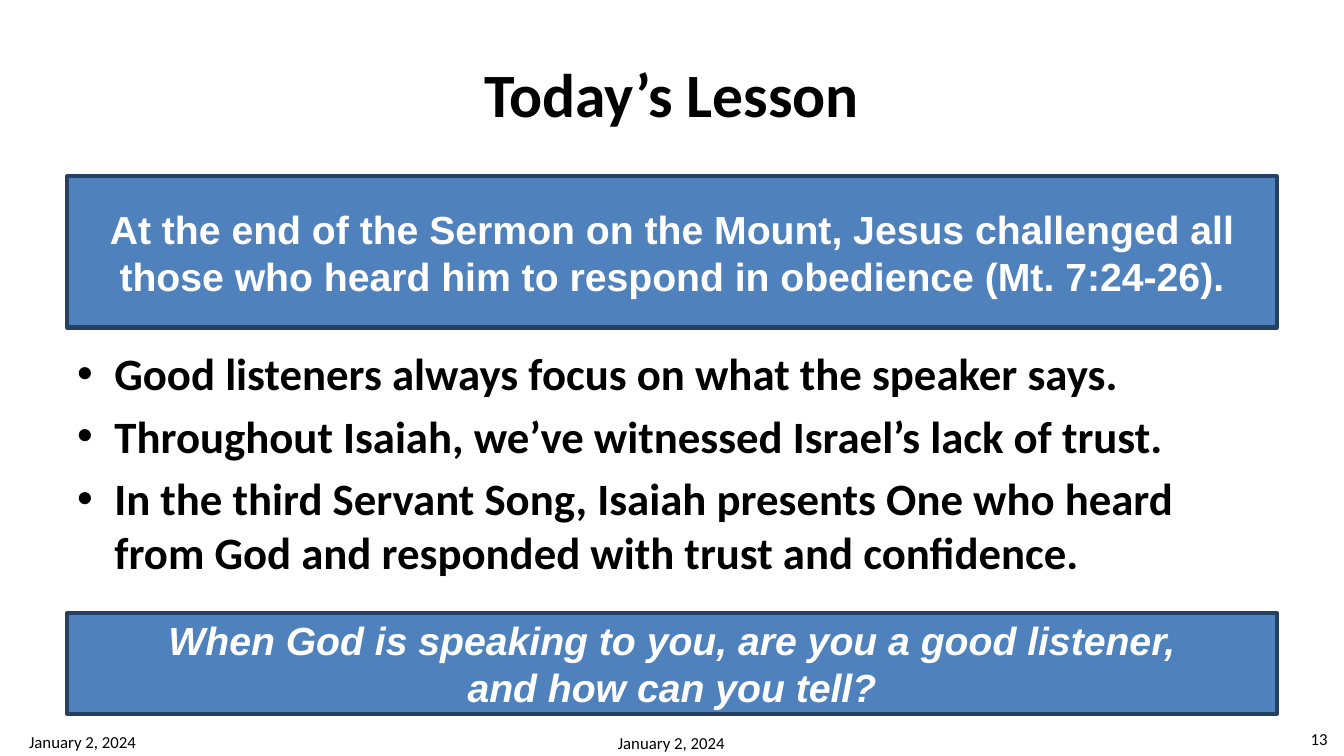
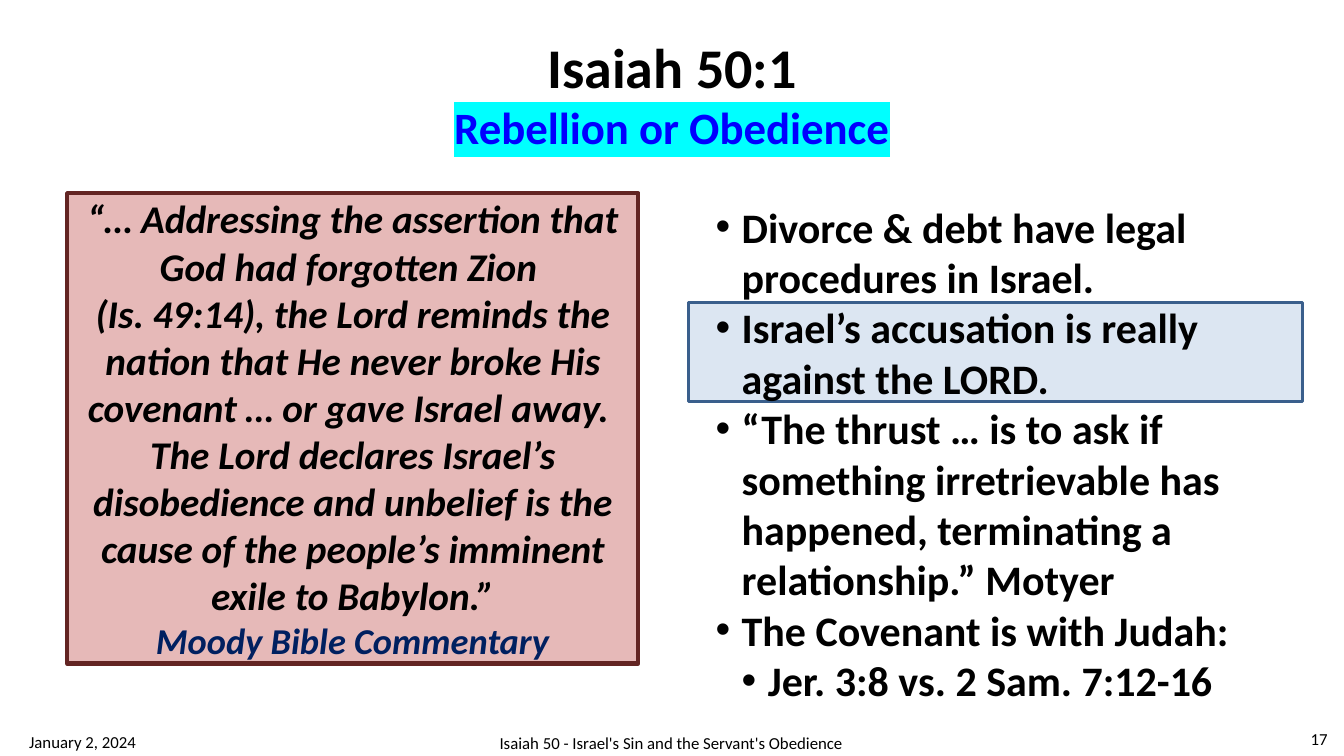
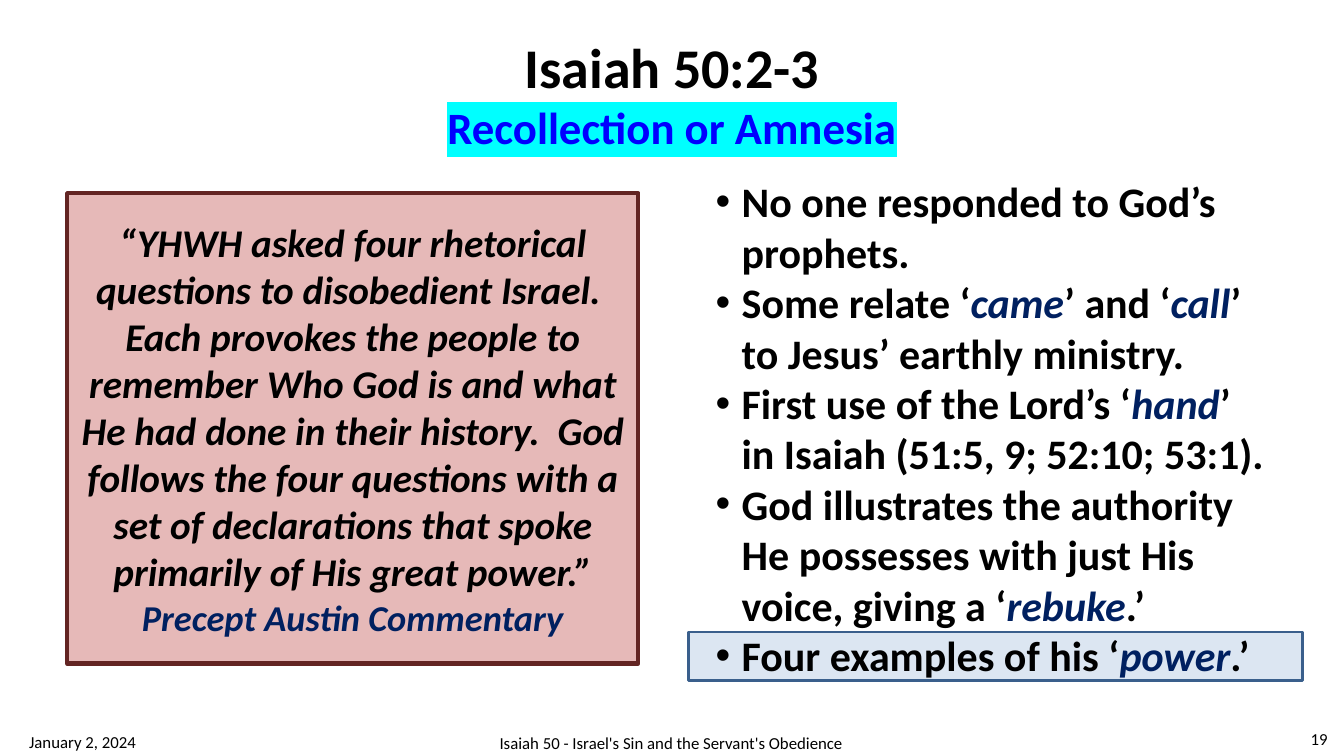
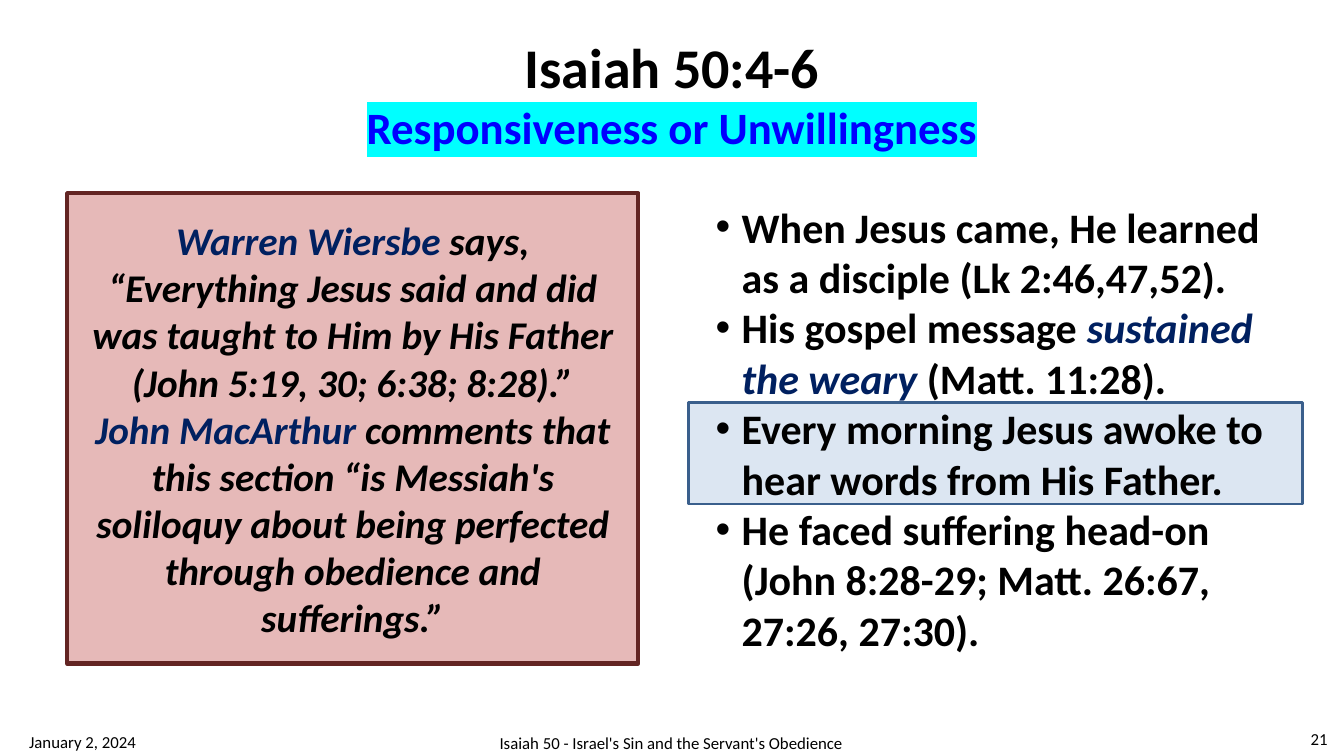
"""Build four slides of a lesson on Isaiah 50."""
from lxml.etree import SubElement
from pptx import Presentation
from pptx.dml.color import RGBColor as RGB
from pptx.enum.shapes import MSO_SHAPE as SHAPE
from pptx.enum.text import MSO_ANCHOR as ANCHOR, MSO_AUTO_SIZE as AUTO, PP_ALIGN as ALIGN
from pptx.oxml import parse_xml
from pptx.oxml.ns import qn
from pptx.util import Pt

BLACK, WHITE = RGB(0, 0, 0), RGB(255, 255, 255)
NAVY, BLUE = RGB(0x00, 0x20, 0x60), RGB(0x00, 0x00, 0xFF)
STEEL, DEEP = RGB(0x4F, 0x81, 0xBD), RGB(0x25, 0x40, 0x61)
PINK, WINE = RGB(0xE6, 0xB9, 0xB8), RGB(0x63, 0x25, 0x23)
PALE, EDGE = RGB(0xDC, 0xE6, 0xF2), RGB(0x3A, 0x5F, 0x8C)
GLOW = ('<a:highlight xmlns:a="http://schemas.openxmlformats.org/drawingml/2006/main">'
        '<a:srgbClr val="00FFFF"/></a:highlight>')
DATE = "January 2, 2024"
THEME = "Isaiah 50 - Israel's Sin and the Servant's Obedience"
LEFT, WIDE = 48, 864


def write(par, text, size, color=BLACK, bold=True, slant=False, font="Calibri",
          align=ALIGN.LEFT, accent=None):
    """Fill a paragraph; parts between asterisks are navy italics."""
    par.alignment = align
    for n, part in enumerate(text.split("*")):
        for row, line in enumerate(part.split("\n")):
            if row:
                par.add_line_break()
            if line:
                run = par.add_run()
                run.text = line
                face = run.font
                face.name, face.bold = font, bold
                face.size = Pt(accent if accent and n % 2 else size)
                face.italic = slant or n % 2 == 1
                face.color.rgb = NAVY if n % 2 else color


def panel(slide, area, fill=None, edge=None, line=3):
    """Add a box, filled and outlined if colours are given, and return its frame."""
    area = [Pt(v) for v in area]
    if fill is None:
        shape = slide.shapes.add_textbox(*area)
    else:
        shape = slide.shapes.add_shape(SHAPE.RECTANGLE, *area)
        shape.shadow.inherit = False
        shape.fill.solid()
        shape.fill.fore_color.rgb = fill
        shape.line.color.rgb = edge
        shape.line.width = Pt(line)
    frame = shape.text_frame
    frame.word_wrap = True
    frame.vertical_anchor = ANCHOR.MIDDLE
    return frame


LESSON = [
    "Good listeners always focus on what the speaker says.",
    "Throughout Isaiah, we’ve witnessed Israel’s lack of trust.",
    "In the third Servant Song, Isaiah presents One who heard from God and responded "
    "with trust and confidence.",
]
BANDS = [
    (126, 108, False, "At the end of the Sermon on the Mount, Jesus challenged all those "
                      "who heard him to respond in obedience (Mt. 7:24-26)."),
    (437.8, 72, True, "When God is speaking to you, are you a good listener,\n"
                      "and how can you tell?"),
]
PAGES = [
    dict(num=13, head="Today’s Lesson", foot=DATE, points=LESSON, bands=BANDS,
         area=(LEFT, 243.4, WIDE, 194.4), size=32, dent=26.64, gap=6.4),
    dict(num=17, head="Isaiah 50:1", sub="Rebellion or Obedience", mark=(216, 70.6),
         area=(504, 145.4, 409, 356.4),
         quote="“… Addressing the assertion that God had forgotten Zion \n(Is. 49:14), the "
               "Lord reminds the nation that He never broke His covenant … or gave Israel "
               "away.  The Lord declares Israel’s disobedience and unbelief is the cause of "
               "the people’s imminent exile to Babylon.”\n*Moody Bible Commentary*",
         points=["Divorce & debt have legal procedures in Israel.",
                 "Israel’s accusation is really against the LORD.",
                 "“The thrust … is to ask if something irretrievable has happened, "
                 "terminating a relationship.” Motyer",
                 "The Covenant is with Judah:",
                 "\tJer. 3:8 vs. 2 Sam. 7:12-16"]),
    dict(num=19, head="Isaiah 50:2-3", sub="Recollection or Amnesia", mark=(451.4, 34.6),
         quote="“YHWH asked four rhetorical questions to disobedient Israel.  Each provokes "
               "the people to remember Who God is and what He had done in their history.  "
               "God follows the four questions with a set of declarations that spoke "
               "primarily of His great power.”\n*Precept Austin Commentary*",
         points=["No one responded to God’s prophets.",
                 "Some relate ‘*came*’ and ‘*call*’ to Jesus’ earthly ministry.",
                 "First use of the Lord’s ‘*hand*’ in Isaiah (51:5, 9; 52:10; 53:1).",
                 "God illustrates the authority He possesses with just His voice, giving a "
                 "‘*rebuke*.’",
                 "Four examples of his ‘*power*.’"]),
    dict(num=21, head="Isaiah 50:4-6", sub="Responsiveness or Unwillingness",
         mark=(287.3, 72.7), accent=28,
         quote="*Warren Wiersbe *says, “Everything Jesus said and did was taught to Him by "
               "His Father (John 5:19, 30; 6:38; 8:28).”\n*John MacArthur *comments that "
               "this section “is Messiah's soliloquy about being perfected through "
               "obedience and sufferings.”",
         points=["When Jesus came, He learned as a disciple (Lk 2:46,47,52).",
                 "His gospel message *sustained the weary* (Matt. 11:28).",
                 "Every morning Jesus awoke to hear words from His Father.",
                 "He faced suffering head-on (John 8:28-29; Matt. 26:67, 27:26, 27:30)."]),
]

deck = Presentation()
deck.slide_width, deck.slide_height = Pt(960), Pt(540)

for page in PAGES:
    slide = deck.slides.add_slide(deck.slide_layouts[5])
    title = slide.shapes.title
    title.left, title.top, title.width, title.height = Pt(LEFT), Pt(21.6), Pt(WIDE), Pt(90)
    frame = title.text_frame
    frame.auto_size, frame.vertical_anchor = AUTO.NONE, ANCHOR.MIDDLE
    par = frame.paragraphs[0]
    sub = page.get("sub")
    write(par, page["head"], 40 if sub else 44, align=ALIGN.CENTER)
    if sub:
        par.add_line_break()
        write(par, sub, 32, BLUE, align=ALIGN.CENTER)
        props = par.runs[-1].font._element
        props.find(qn("a:solidFill")).addnext(parse_xml(GLOW))

    if "quote" in page:
        frame = panel(slide, (LEFT, 138, 408, 336), PINK, WINE)
        write(frame.paragraphs[0], page["quote"], 28, slant=True, align=ALIGN.CENTER,
              accent=page.get("accent", 26))
        top, high = page["mark"]
        panel(slide, (492, top, 438.5, high), PALE, EDGE, 2)

    frame = panel(slide, page.get("area", (504, 127.4, 409, 356.4)))
    if "bands" in page:
        frame.vertical_anchor = ANCHOR.TOP
    dent = page.get("dent", 18.72)
    for n, text in enumerate(page["points"]):
        par = frame.add_paragraph() if n else frame.paragraphs[0]
        par.level = int(text.startswith("\t"))
        props = par._p.get_or_add_pPr()
        props.set("marL", str(Pt(dent * (par.level + 1))))
        props.set("indent", str(-Pt(dent)))
        SubElement(props, qn("a:buFont")).set("typeface", "Arial")
        SubElement(props, qn("a:buChar")).set("char", "•")
        if n:
            par.space_before = Pt(page.get("gap", 0))
        write(par, text.strip("\t"), page.get("size", 30))

    for top, high, slant, text in page.get("bands", []):
        frame = panel(slide, (LEFT, top, WIDE, high), STEEL, DEEP)
        write(frame.paragraphs[0], text, 28, WHITE, slant=slant, font="Arial",
              align=ALIGN.CENTER)

    for area, text, align in [
        ((13.7, 515.5, 165, 28.8), DATE, ALIGN.LEFT),
        ((147.6, 516.2, 663.8, 28.8), page.get("foot", THEME), ALIGN.CENTER),
        ((883.4, 513.4, 72, 28.8), str(page["num"]), ALIGN.RIGHT),
    ]:
        write(panel(slide, area).paragraphs[0], text, 12, bold=False, align=align)

deck.save("out.pptx")
